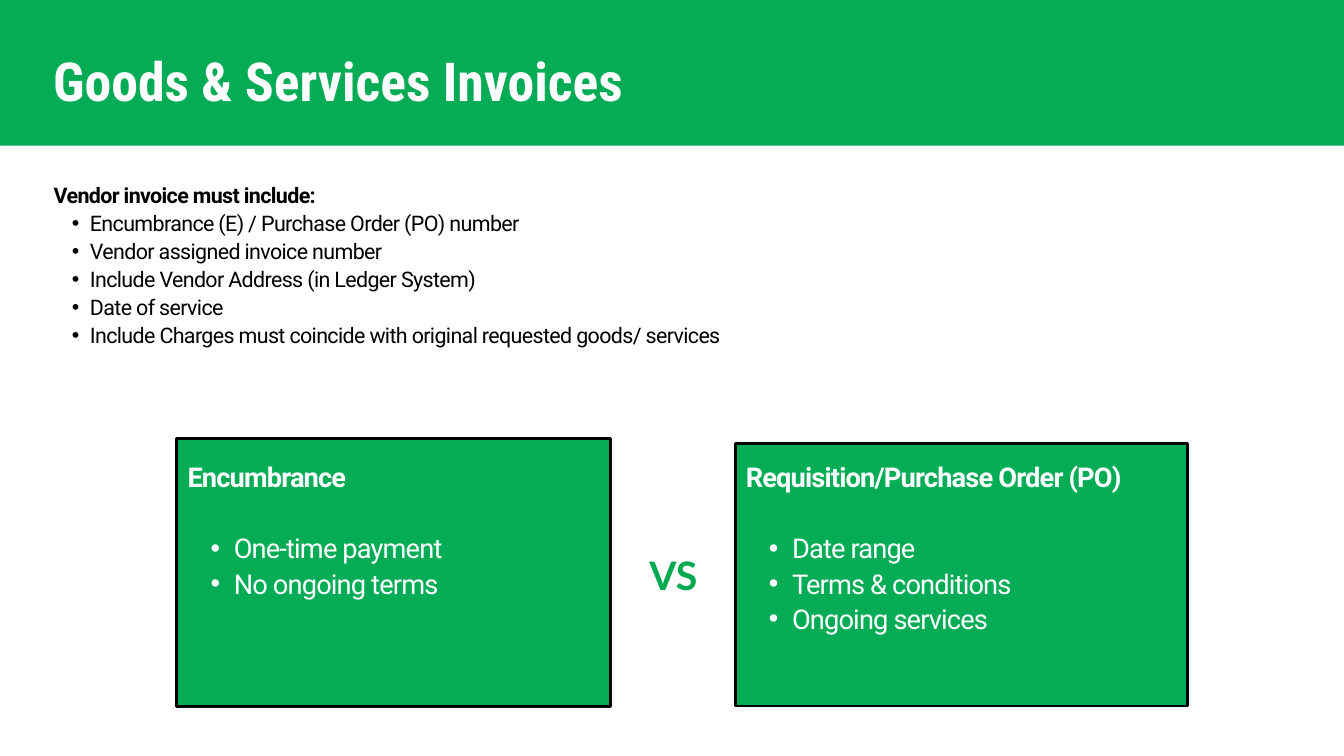
from dataclasses import dataclass

from lxml import etree
from pptx import Presentation
from pptx import util as u
from pptx.dml.color import RGBColor
from pptx.enum import shapes, text
from pptx.oxml import ns

GREEN = RGBColor(0x04, 0xAC, 0x56)
VERSUS_GREEN = RGBColor(0x00, 0xA9, 0x50)
WHITE = RGBColor(0xFF, 0xFF, 0xFF)
BLACK = RGBColor(0, 0, 0)


@dataclass
class TextStyle:
    """Sizes, line heights and tracking are in points; indent is in cm."""
    font: str
    size: float
    color: RGBColor
    line: float
    tracking: float = 0
    indent: float = 0


TITLE = TextStyle("Roboto Condensed", 57.6, WHITE, 54.2)
BODY = TextStyle("Roboto", 23, BLACK, 29.9, -0.7, 1.37)
CARD = TextStyle("Roboto", 29.2, WHITE, 38, -0.9, 1.75)
VERSUS = TextStyle("Lato", 42, VERSUS_GREEN, 50.4)


class SlideBuilder:
    def __init__(self, page):
        self.page = page

    def panel(self, left, top, width, height, outline=None):
        panel = self.page.shapes.add_shape(
            shapes.MSO_SHAPE.RECTANGLE,
            u.Cm(left), u.Cm(top), u.Cm(width), u.Cm(height))
        panel.shadow.inherit = False
        panel.fill.solid()
        panel.fill.fore_color.rgb = GREEN
        if outline is None:
            panel.line.fill.background()
        else:
            panel.line.color.rgb = outline
            panel.line.width = u.Pt(3)

    def text_box(self, left, top, width, height, style, heading,
                 items=(), gap=0, align=text.PP_ALIGN.LEFT):
        """Add a bold heading, then a gap in points, then bulleted items."""
        box = self.page.shapes.add_textbox(
            u.Cm(left), u.Cm(top), u.Cm(width), u.Cm(height))
        frame = box.text_frame
        frame.word_wrap = True
        frame.auto_size = text.MSO_AUTO_SIZE.SHAPE_TO_FIT_TEXT
        frame.margin_left = frame.margin_right = 0
        frame.margin_top = frame.margin_bottom = 0
        para = frame.paragraphs[0]
        para.alignment = align
        para.space_after = u.Pt(gap)
        self.add_span(para, heading, style, bold=True)
        for item in items:
            para = frame.add_paragraph()
            self.bullet(para, style.indent)
            self.add_span(para, item, style)

    def bullet(self, para, indent):
        para.level = 1
        properties = para._p.get_or_add_pPr()
        properties.set("marL", str(u.Cm(indent)))
        properties.set("indent", str(-u.Cm(indent / 2)))
        etree.SubElement(properties, ns.qn("a:buFont")).set("typeface", "Arial")
        etree.SubElement(properties, ns.qn("a:buChar")).set("char", "•")

    def add_span(self, para, words, style, bold=False):
        para.line_spacing = u.Pt(style.line)
        span = para.add_run()
        span.text = words
        span.font.name = style.font
        span.font.size = u.Pt(style.size)
        span.font.bold = bold
        span.font.color.rgb = style.color
        if style.tracking:
            span._r.get_or_add_rPr().set("spc", str(round(style.tracking * 100)))


def main():
    deck = Presentation()
    deck.slide_width, deck.slide_height = u.Cm(50.8), u.Cm(28.58)
    slide = SlideBuilder(deck.slides.add_slide(deck.slide_layouts[6]))

    slide.panel(0, 0, 50.8, 5.51)
    slide.text_box(2.01, 2.34, 41.61, 2.06, TITLE, "Goods & Services Invoices")

    slide.text_box(2.03, 6.81, 27.36, 6.35, BODY, "Vendor invoice must include:", [
        "Encumbrance (E) / Purchase Order (PO) number",
        "Vendor assigned invoice number",
        "Include Vendor Address (in Ledger System)",
        "Date of service",
        "Include Charges must coincide with original requested goods/ services",
    ])

    slide.panel(6.68, 16.59, 16.41, 10.11, BLACK)
    slide.text_box(7.09, 17.3, 11.4, 6.5, CARD, "Encumbrance",
                   ["One-time payment", "No ongoing terms"], gap=CARD.line)

    slide.panel(27.81, 16.76, 17.09, 9.93, BLACK)
    slide.text_box(28.19, 17.3, 16.71, 7.82, CARD, "Requisition/Purchase Order (PO)",
                   ["Date range", "Terms & conditions", "Ongoing services"],
                   gap=CARD.line)

    slide.text_box(23.09, 20.83, 4.72, 1.78, VERSUS, "VS",
                   align=text.PP_ALIGN.CENTER)

    deck.save("out.pptx")


if __name__ == "__main__":
    main()
